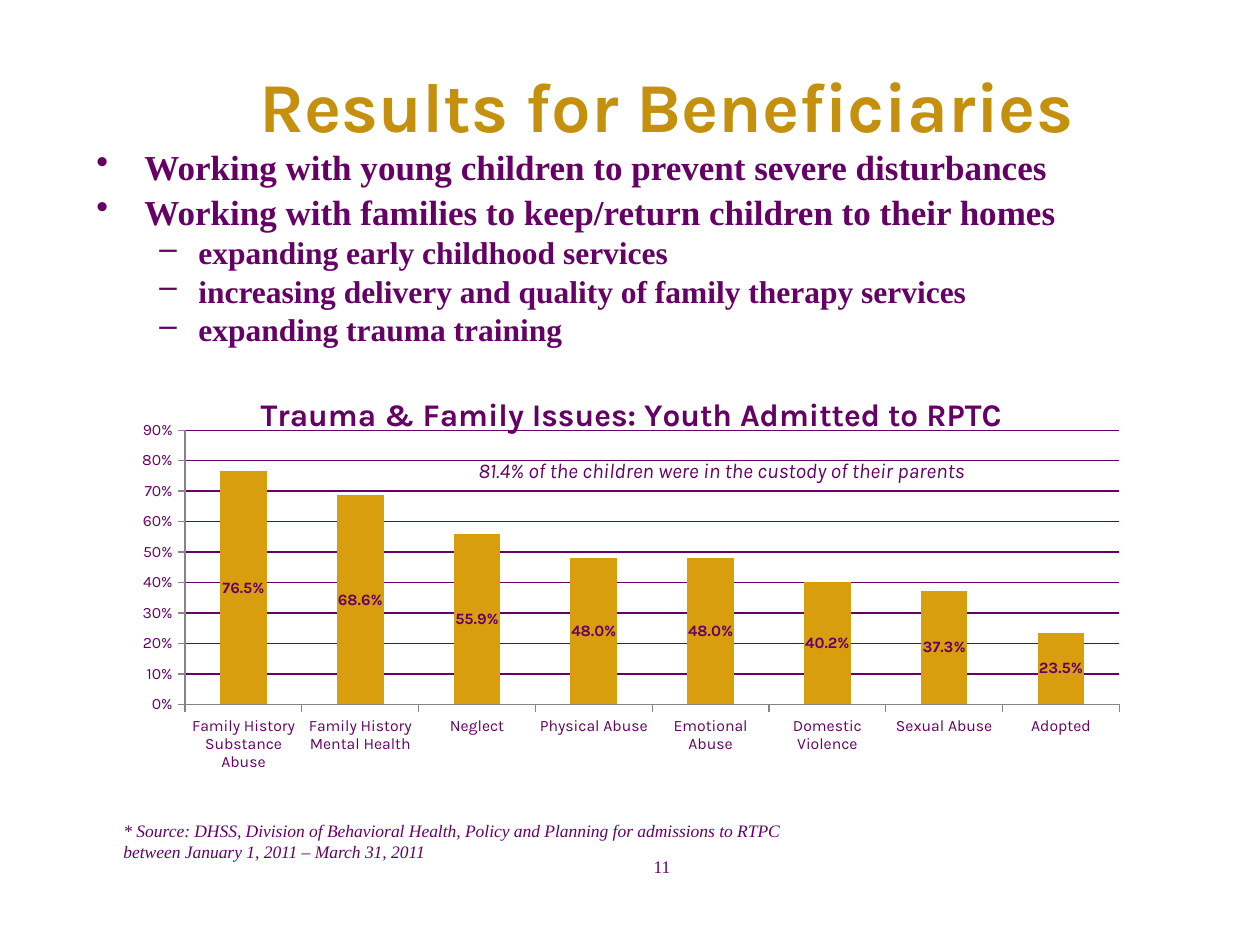
from lxml import etree
from pptx import Presentation
from pptx.chart.data import CategoryChartData
from pptx.dml.color import RGBColor
from pptx.enum.chart import XL_CHART_TYPE, XL_LABEL_POSITION, XL_TICK_MARK
from pptx.enum.text import MSO_ANCHOR, PP_ALIGN
from pptx.oxml.ns import qn
from pptx.util import Pt

PX = 914400 / 126
STACKED = XL_CHART_TYPE.COLUMN_STACKED
LABEL_CENTER = XL_LABEL_POSITION.CENTER
TICK_OUT = XL_TICK_MARK.OUTSIDE
TOP, MIDDLE = MSO_ANCHOR.TOP, MSO_ANCHOR.MIDDLE
LEFT, CENTER = PP_ALIGN.LEFT, PP_ALIGN.CENTER

COLORS = {"title": "C5900D", "text": "660066", "bar": "D89E0E", "axis": "868686"}
SANS, SERIF = "Karla", "Times New Roman"

# Per level: bullet, text size, left edge and hanging indent in px, space before
LEVELS = [("•", 20, 48, 48, 6.7), ("–", 18, 102, 39, 4.8)]
POINTS = [
    (0, "Working with young children to prevent severe disturbances"),
    (0, "Working with families to keep/return children to their homes"),
    (1, "expanding early childhood services"),
    (1, "increasing delivery and quality of family therapy services"),
    (1, "expanding trauma training"),
]
ADMISSIONS = [
    ("Family History Substance Abuse", 0.765),
    ("Family History Mental Health", 0.686),
    ("Neglect", 0.559),
    ("Physical Abuse", 0.48),
    ("Emotional Abuse", 0.48),
    ("Domestic Violence", 0.402),
    ("Sexual Abuse", 0.373),
    ("Adopted", 0.235),
]


def px(*lengths):
    return [round(length * PX) for length in lengths]


def rgb(name):
    return RGBColor.from_string(COLORS[name])


def style(font, size, face, color="text", bold=False, italic=False):
    font.size, font.name = Pt(size), face
    font.bold, font.italic = bold, italic
    font.color.rgb = rgb(color)


def add_box(slide, area, anchor=TOP):
    frame = slide.shapes.add_textbox(*px(*area)).text_frame
    frame.word_wrap = True
    frame.vertical_anchor = anchor
    return frame


def add_text(slide, area, lines, size, face, align=LEFT, anchor=TOP, **look):
    paragraph = add_box(slide, area, anchor).paragraphs[0]
    paragraph.alignment = align
    for number, line in enumerate(lines):
        if number:
            paragraph.add_line_break()
        run = paragraph.add_run()
        run.text = line
        style(run.font, size, face, **look)


def add_points(slide, area):
    frame = add_box(slide, area)
    for number, (level, wording) in enumerate(POINTS):
        mark, size, left, hang, before = LEVELS[level]
        paragraph = frame.add_paragraph() if number else frame.paragraphs[0]
        paragraph.level = level
        paragraph.line_spacing = 0.8
        paragraph.space_before = Pt(before if number else 0)
        properties = paragraph._p.get_or_add_pPr()
        margin, indent = px(left, -hang)
        properties.set("marL", str(margin))
        properties.set("indent", str(indent))
        etree.SubElement(properties, qn("a:buChar")).set("char", mark)
        run = paragraph.add_run()
        run.text = wording
        style(run.font, size, SERIF, bold=True)


def place(element, index, **settings):
    """Give a chart part a manual layout."""
    layout = element.find(qn("c:layout"))
    if layout is None:
        layout = etree.Element(qn("c:layout"))
        element.insert(index, layout)
    manual = etree.SubElement(layout, qn("c:manualLayout"))
    for key, value in settings.items():
        etree.SubElement(manual, qn("c:" + key)).set("val", str(value))


def style_axis(axis):
    axis.major_tick_mark = TICK_OUT
    axis.format.line.color.rgb = rgb("axis")
    style(axis.tick_labels.font, 9, SANS)


def add_admissions_chart(slide, area):
    data = CategoryChartData(number_format="0.0%")
    data.categories = [name for name, _ in ADMISSIONS]
    data.add_series("Series 1", [share for _, share in ADMISSIONS])
    chart = slide.shapes.add_chart(STACKED, *px(*area), data).chart
    chart.has_legend = False
    chart.font.size, chart.font.name = Pt(10), SERIF

    # Heading and plot position
    chart.has_title = True
    heading = chart.chart_title.text_frame.paragraphs[0].add_run()
    heading.text = "Trauma & Family Issues: Youth Admitted to RPTC"
    style(heading.font, 18, SANS, bold=True)
    place(chart.chart_title._element, 1, xMode="edge", yMode="edge", x=0.14, y=0.05)
    place(chart._chartSpace.chart.plotArea, 0, layoutTarget="inner",
          xMode="edge", yMode="edge", x=0.072, y=0.152, w=0.908, h=0.669)

    # Axes
    style_axis(chart.category_axis)
    shares = chart.value_axis
    style_axis(shares)
    shares.minimum_scale, shares.maximum_scale, shares.major_unit = 0, 0.9, 0.1
    shares.tick_labels.number_format = "0%"
    shares.tick_labels.number_format_is_linked = False
    shares.has_major_gridlines = True
    grid = shares.major_gridlines.format.line
    grid.width = Pt(0.75)
    grid.color.rgb = rgb("text")

    # Bars and their labels
    plot = chart.plots[0]
    plot.gap_width, plot.overlap = 150, 100
    plot.vary_by_categories = False
    bars = plot.series[0]
    bars.format.fill.solid()
    bars.format.fill.fore_color.rgb = rgb("bar")
    labels = bars.data_labels
    labels.show_value = True
    labels.position = LABEL_CENTER
    labels.number_format = "0.0%"
    labels.number_format_is_linked = False
    style(labels.font, 9, SANS, bold=True)


def main():
    deck = Presentation()
    deck.slide_width, deck.slide_height = px(1260, 945)
    slide = deck.slides.add_slide(deck.slide_layouts[6])

    add_text(slide, (136, 42, 1061, 126), ["Results for Beneficiaries"], 40, SANS,
             align=CENTER, anchor=MIDDLE, color="title", bold=True)
    add_points(slide, (84, 147, 1103, 212))
    add_text(slide, (111, 814, 1029, 55),
             ["* Source: DHSS, Division of Behavioral Health, Policy and Planning"
              " for admissions to RTPC",
              "between January 1, 2011 – March 31, 2011"], 10, SERIF, italic=True)
    add_admissions_chart(slide, (111, 368, 1029, 410))
    add_text(slide, (466, 451, 577, 38),
             ["81.4% of the children were in the custody of their parents"],
             12, SANS, italic=True)
    add_text(slide, (473, 850, 378, 66), ["11"], 10, SERIF, align=CENTER)

    deck.save("out.pptx")


if __name__ == "__main__":
    main()
